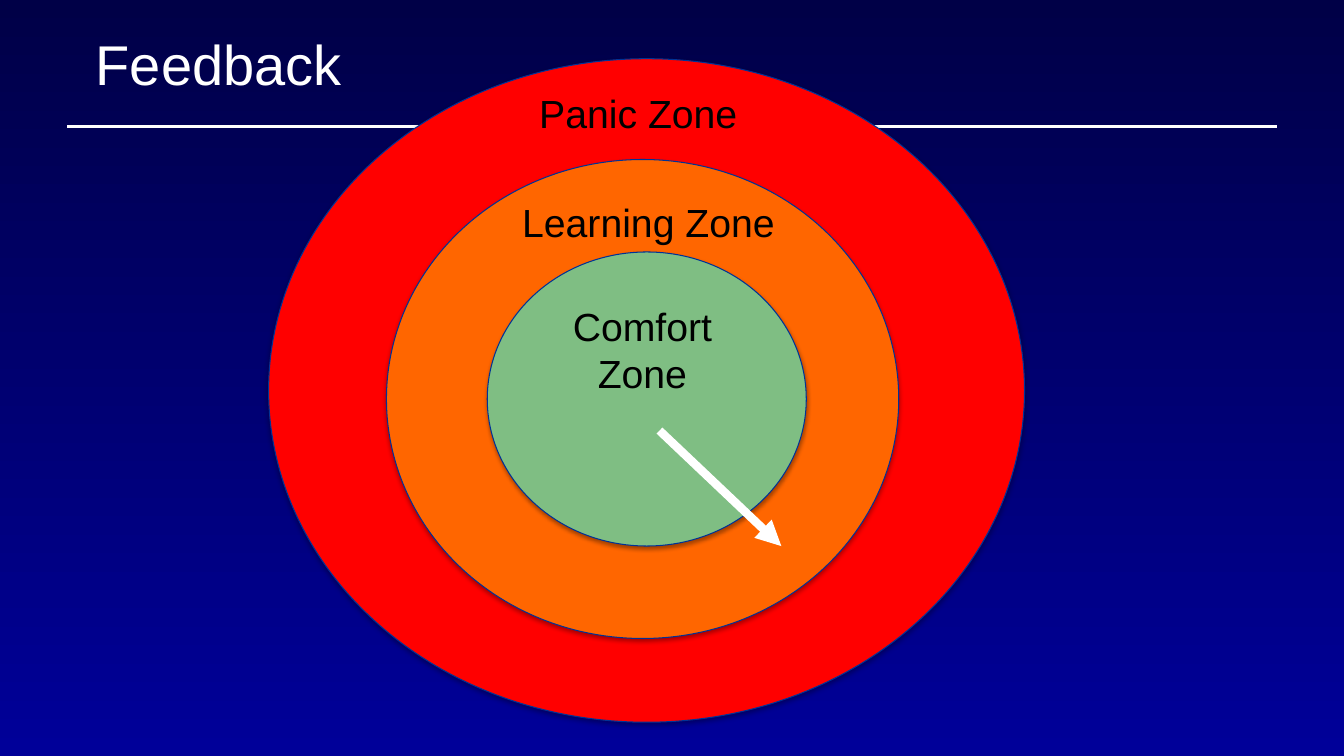
from dataclasses import dataclass

from lxml.etree import SubElement
from pptx import Presentation
from pptx.dml.color import RGBColor as RGB
from pptx.enum.shapes import MSO_CONNECTOR as Connector, MSO_SHAPE as Shape
from pptx.enum.text import MSO_ANCHOR as Anchor, MSO_AUTO_SIZE as AutoSize, PP_ALIGN as Align
from pptx.oxml.ns import qn
from pptx.util import Cm, Pt


@dataclass(frozen=True)
class Theme:
    font: str = "Arial"
    title_size: int = 40
    label_size: int = 28
    background_top: str = "000047"
    background_bottom: str = "000099"
    light: str = "FFFFFF"
    dark: str = "000000"
    outline: str = "003296"
    panic: str = "FF0000"
    learning: str = "FF6600"
    comfort: str = "7FBE83"


THEME = Theme()


def color(value):
    return RGB.from_string(value)


def paint_background(slide):
    fill = slide.background.fill
    fill.gradient()
    fill.gradient_angle = 270
    stops = (THEME.background_top, THEME.background_bottom)
    for stop, value in zip(fill.gradient_stops, stops):
        stop.color.rgb = color(value)


def write_text(shape, text, size, value, align):
    frame = shape.text_frame
    frame.text = text
    frame.word_wrap = True
    paragraph = frame.paragraphs[0]
    paragraph.alignment = align
    font = paragraph.runs[0].font
    font.name, font.size = THEME.font, Pt(size)
    font.color.rgb = color(value)


def set_title(slide, text, box):
    title = slide.shapes.title
    title.left, title.top, title.width, title.height = map(Cm, box)
    write_text(title, text, THEME.title_size, THEME.light, Align.CENTER)
    title.text_frame.vertical_anchor = Anchor.MIDDLE


def add_line(slide, start, end, width, arrow=False):
    line = slide.shapes.add_connector(Connector.STRAIGHT, *map(Cm, start + end))
    line.line.color.rgb = color(THEME.light)
    line.line.width = Pt(width)
    if arrow:
        SubElement(line.line._get_or_add_ln(), qn("a:tailEnd"), type="triangle")
    SubElement(line._element.spPr, qn("a:effectLst"))


def add_soft_shadow(shape):
    shape.shadow.inherit = False
    effects = shape._element.spPr.find(qn("a:effectLst"))
    shadow = SubElement(effects, qn("a:outerShdw"), blurRad=str(Pt(3.1)),
                        dist=str(Pt(1.8)), dir="5400000", rotWithShape="0")
    black = SubElement(shadow, qn("a:srgbClr"), val=THEME.dark)
    SubElement(black, qn("a:alpha"), val="35000")


def add_zone(slide, box, fill):
    zone = slide.shapes.add_shape(Shape.OVAL, *map(Cm, box))
    zone.fill.solid()
    zone.fill.fore_color.rgb = color(fill)
    zone.line.color.rgb = color(THEME.outline)
    zone.line.width = Pt(0.75)
    add_soft_shadow(zone)


def add_label(slide, text, box, align=Align.LEFT):
    label = slide.shapes.add_textbox(*map(Cm, box))
    write_text(label, text, THEME.label_size, THEME.dark, align)
    label.text_frame.auto_size = AutoSize.SHAPE_TO_FIT_TEXT


def main():
    presentation = Presentation()
    presentation.slide_width, presentation.slide_height = Cm(33.87), Cm(19.05)
    slide = presentation.slides.add_slide(presentation.slide_layouts[5])
    paint_background(slide)

    # Heading and divider
    set_title(slide, "Feedback", (0.64, 0, 9.74, 3.18))
    add_line(slide, (1.69, 3.18), (32.17, 3.18), 2)

    # Zones, from the outside in
    add_zone(slide, (6.77, 1.48, 19.05, 16.72), THEME.panic)
    add_zone(slide, (9.74, 4.02, 12.91, 12.07), THEME.learning)
    add_zone(slide, (12.28, 6.35, 8.04, 7.41), THEME.comfort)

    # Zone names
    add_label(slide, "Comfort Zone", (13.65, 7.49, 5.08, 3.84), Align.CENTER)
    add_label(slide, "Learning Zone", (12.91, 4.87, 9.74, 1.45))
    add_label(slide, "Panic Zone", (13.34, 2.12, 8.47, 1.45))

    # Step out of the comfort zone
    add_line(slide, (16.62, 10.85), (19.69, 13.76), 6, arrow=True)

    presentation.save("out.pptx")


if __name__ == "__main__":
    main()
